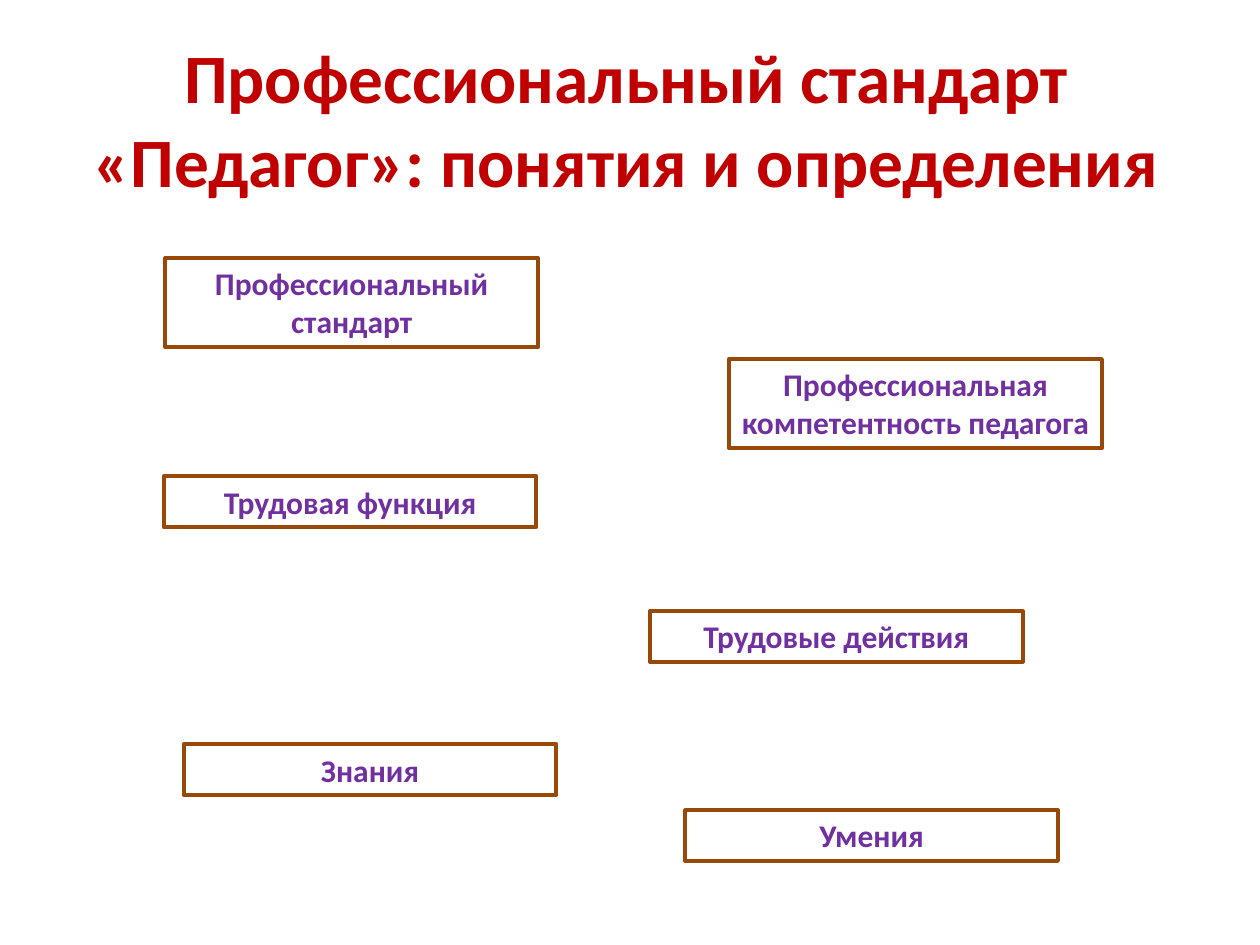
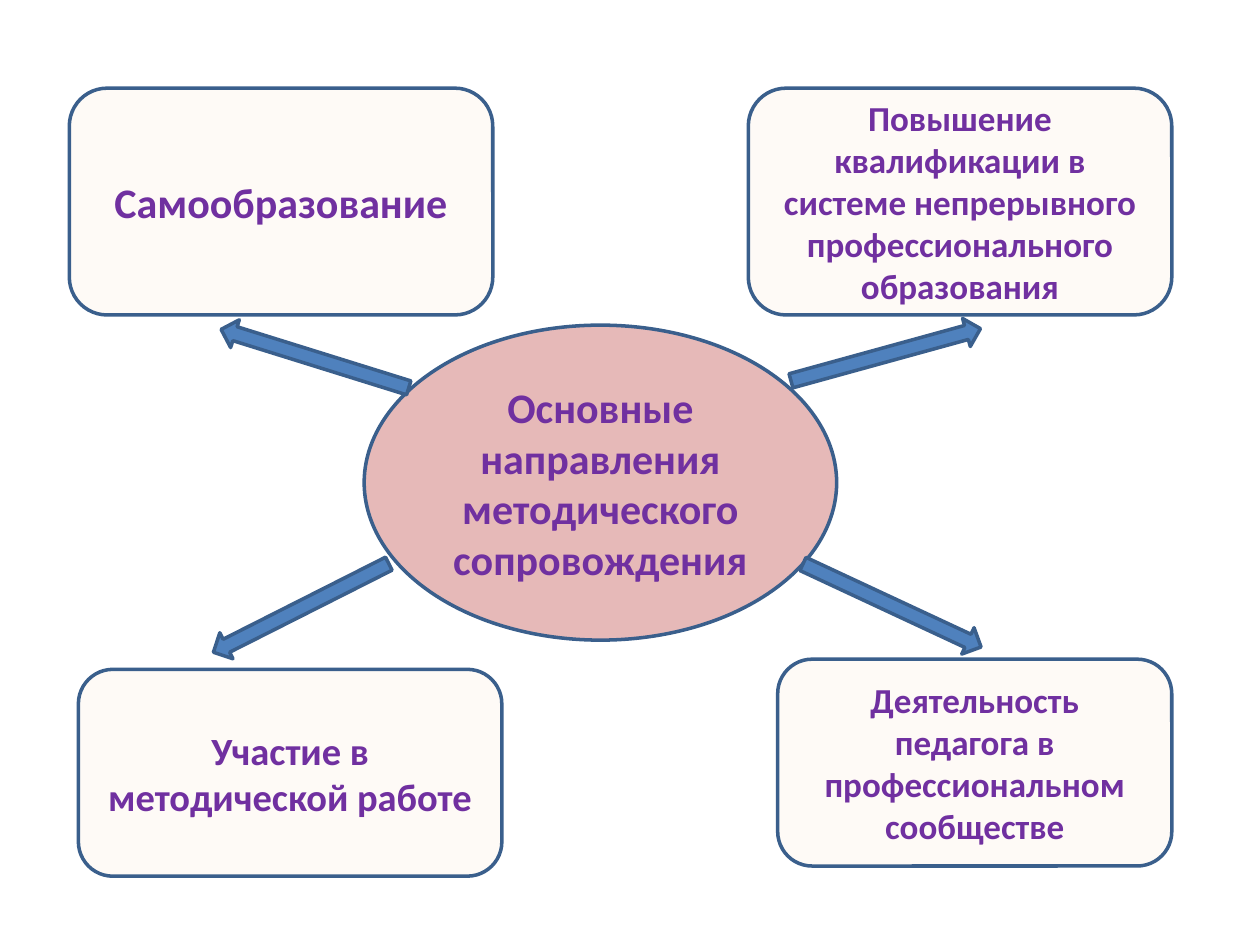
import pptx
import pptx.dml.color
import pptx.enum.shapes
import pptx.enum.text
import pptx.oxml.ns
import pptx.util
from lxml import etree

Pt = pptx.util.Pt
RGBColor = pptx.dml.color.RGBColor
MSO_SHAPE = pptx.enum.shapes.MSO_SHAPE
MSO_ANCHOR = pptx.enum.text.MSO_ANCHOR
MSO_AUTO_SIZE = pptx.enum.text.MSO_AUTO_SIZE
PP_ALIGN = pptx.enum.text.PP_ALIGN

FONT = "Calibri"
RED = RGBColor(0xC0, 0x00, 0x00)
PURPLE = RGBColor(0x70, 0x30, 0xA0)
BROWN = RGBColor(0x98, 0x48, 0x07)
BLUE = RGBColor(0x4F, 0x81, 0xBD)
DARK_BLUE = RGBColor(0x3A, 0x5F, 0x8C)
PINK = RGBColor(0xE6, 0xB9, 0xB8)
CREAM = RGBColor(0xFD, 0xEA, 0xDA)

TERM_WIDTH = 213
ARROW_SIZE = (112.3, 16.6)

# text, left, top, height
TERMS = [
    ("Профессиональный стандарт", 94.5, 147.4, 51),
    ("Профессиональная компетентность педагога", 416.7, 205.2, 51),
    ("Трудовая функция", 93.6, 272.2, 29),
    ("Трудовые действия", 371.4, 349.2, 29),
    ("Знания", 105, 425.4, 29),
    ("Умения", 391.6, 463, 29),
]

# text, font size, left, top, width, height
DIRECTIONS = [
    ("Самообразование", 24, 39.6, 50.4, 242, 129.6),
    ("Повышение квалификации в системе непрерывного "
     "профессионального образования", 20, 427.6, 50.4, 242, 129.6),
    ("Участие в методической работе", 22, 44.8, 382.5, 242, 118.2),
    ("Деятельность педагога в профессиональном сообществе",
     20, 444.4, 376.7, 225.2, 118.2),
]

# left, top, rotation
ARROWS = [
    (450, 194.4, 344.6),
    (123.8, 196.6, 197.3),
    (115.9, 339.1, 153.2),
    (453.6, 337.7, 25),
]


def write(shape, text, size, color=PURPLE, anchor=MSO_ANCHOR.MIDDLE):
    tf = shape.text_frame
    tf.word_wrap = True
    tf.vertical_anchor = anchor
    p = tf.paragraphs[0]
    p.text = text
    p.alignment = PP_ALIGN.CENTER
    p.font.name = FONT
    p.font.size = Pt(size)
    p.font.bold = True
    p.font.color.rgb = color


def add_text(s, text, size, box, color=PURPLE, anchor=MSO_ANCHOR.MIDDLE):
    sp = s.shapes.add_textbox(*map(Pt, box))
    write(sp, text, size, color, anchor)
    return sp


def add_term(s, text, left, top, height):
    sp = add_text(s, text, 18, (left, top, TERM_WIDTH, height),
                  anchor=MSO_ANCHOR.TOP)
    sp.text_frame.auto_size = MSO_AUTO_SIZE.SHAPE_TO_FIT_TEXT
    sp.line.color.rgb = BROWN
    sp.line.width = Pt(2.25)


def add_figure(s, kind, box, fill):
    sp = s.shapes.add_shape(kind, *map(Pt, box))
    sp.shadow.inherit = False
    sp.fill.solid()
    sp.fill.fore_color.rgb = fill
    sp.line.color.rgb = DARK_BLUE
    sp.line.width = Pt(2)
    return sp


def set_opacity(sp, percent):
    qn = pptx.oxml.ns.qn
    color = sp.fill._xPr.find(qn("a:solidFill")).find(qn("a:srgbClr"))
    etree.SubElement(color, qn("a:alpha"), val=str(percent * 1000))


def add_direction(s, text, size, *box):
    sp = add_figure(s, MSO_SHAPE.ROUNDED_RECTANGLE, box, CREAM)
    set_opacity(sp, 23)
    write(sp, text, size)


def add_arrow(s, left, top, rotation):
    sp = add_figure(s, MSO_SHAPE.RIGHT_ARROW, (left, top, *ARROW_SIZE), BLUE)
    sp.rotation = rotation


def build_terms(s):
    add_text(s, "Профессиональный стандарт «Педагог»: понятия и определения",
             39.6, (33.8, 22.3, 648, 90), RED)
    for term in TERMS:
        add_term(s, *term)


def build_directions(s):
    center = add_figure(s, MSO_SHAPE.OVAL, (208.1, 185.8, 270, 180), PINK)
    write(center, "Основные направления методического сопровождения", 24)
    for direction in DIRECTIONS:
        add_direction(s, *direction)
    for arrow in ARROWS:
        add_arrow(s, *arrow)


def main():
    prs = pptx.Presentation()
    prs.slide_width, prs.slide_height = Pt(720), Pt(540)
    blank = prs.slide_layouts[6]
    for build in (build_terms, build_directions):
        build(prs.slides.add_slide(blank))
    prs.save("out.pptx")


if __name__ == "__main__":
    main()
